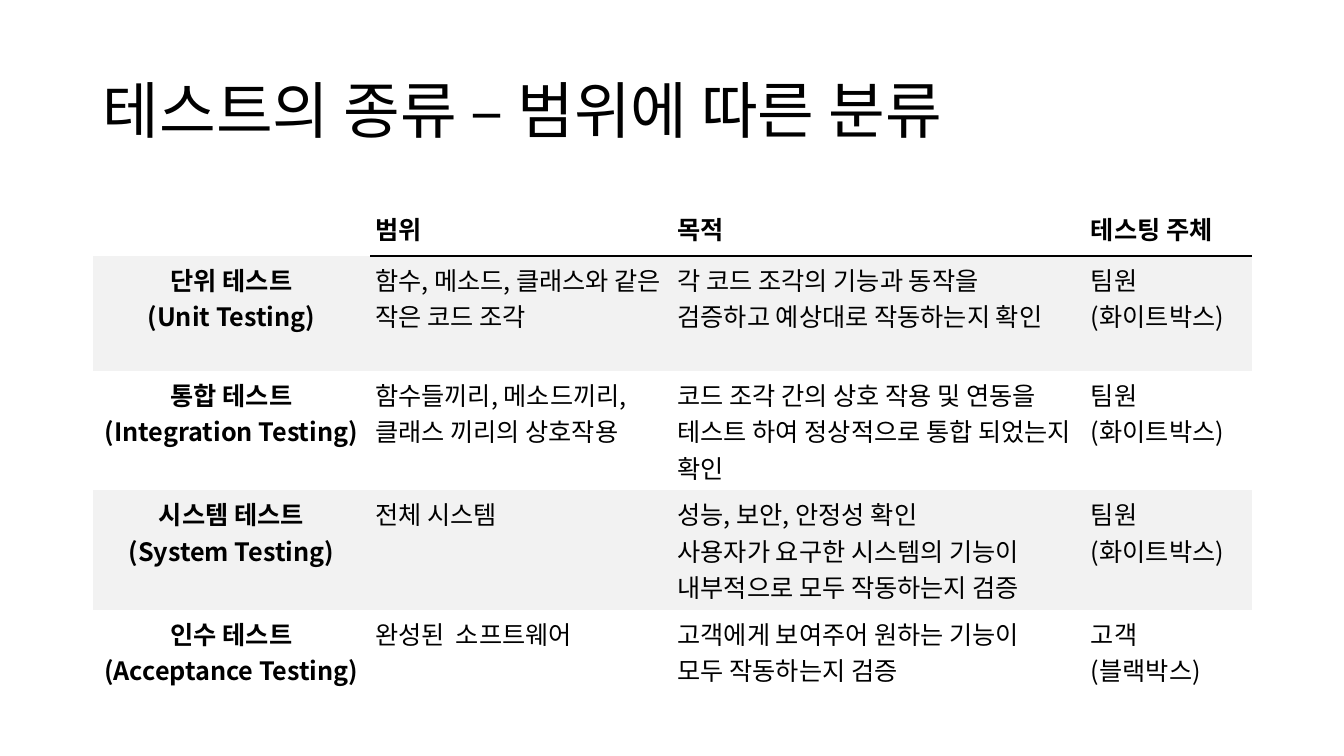
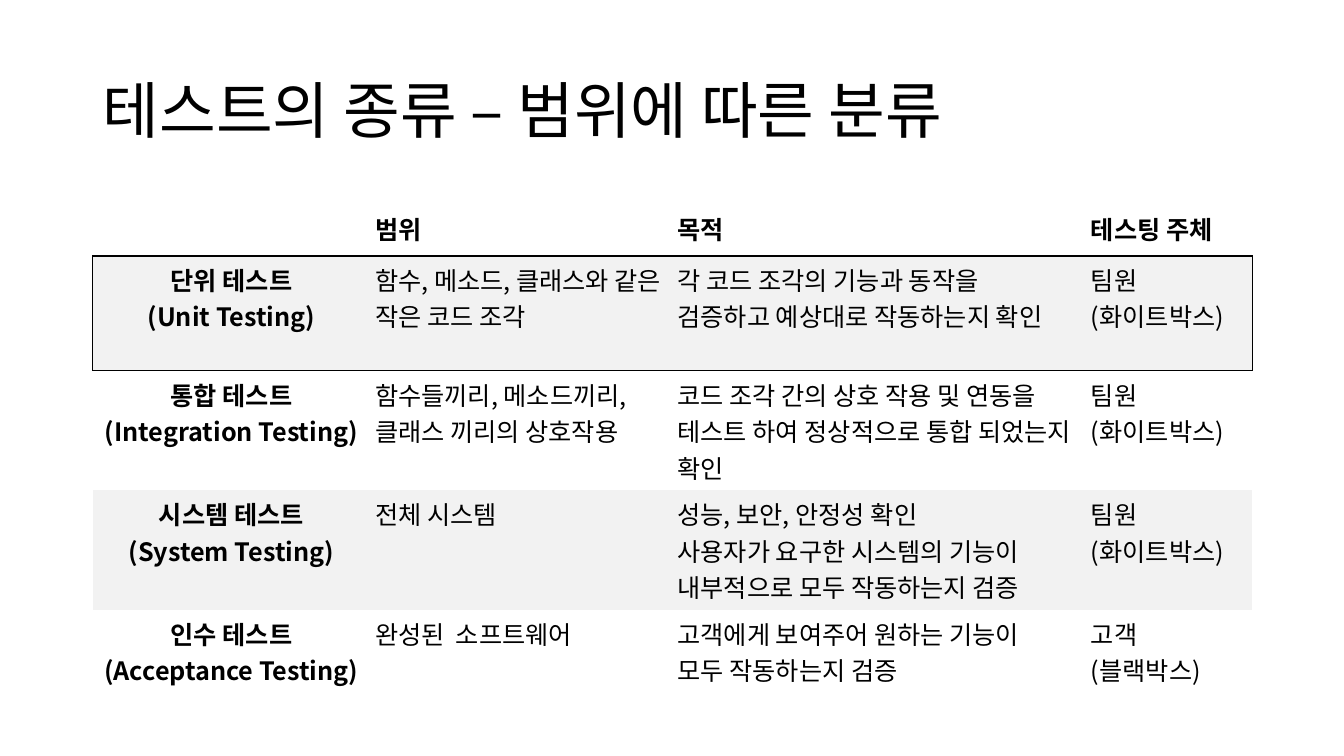
from dataclasses import dataclass
from typing import NamedTuple

from lxml.etree import SubElement
from pptx import Presentation
from pptx.dml.color import RGBColor
from pptx.enum.text import MSO_ANCHOR, MSO_AUTO_SIZE, PP_ALIGN
from pptx.oxml.ns import qn
from pptx.slide import Slide
from pptx.table import _Cell as Cell
from pptx.text.text import TextFrame
from pptx.util import Inches, Pt


@dataclass(frozen=True)
class Theme:
    font: str = "Noto Sans CJK KR"
    ink: str = "000000"
    band: str = "F2F2F2"
    title: int = 44
    body: int = 18
    rule: int = 1


class Level(NamedTuple):
    name: str
    scope: str
    goal: str
    tester: str


THEME = Theme()
TITLE = "테스트의 종류 – 범위에 따른 분류"
LEFT, WIDTH = 0.92, 11.5
COLS = (2.75, 3, 4.1, 1.65)
HEAD, ROW = 0.54, 1.14
TEAM = "팀원\v(화이트박스)"
# "\v" breaks a line inside a paragraph; "\n" starts a new paragraph.
LEVELS = (
    Level("", "범위", "목적", "테스팅 주체"),
    Level("단위 테스트\v(Unit Testing)",
          "함수, 메소드, 클래스와 같은 작은 코드 조각",
          "각 코드 조각의 기능과 동작을\v검증하고 예상대로 작동하는지 확인",
          TEAM),
    Level("통합 테스트\n(Integration Testing)",
          "함수들끼리, 메소드끼리,\v클래스 끼리의 상호작용",
          "코드 조각 간의 상호 작용 및 연동을\v테스트 하여 정상적으로 통합 되었는지 확인",
          TEAM),
    Level("시스템 테스트\n(System Testing)",
          "전체 시스템",
          "성능, 보안, 안정성 확인\v사용자가 요구한 시스템의 기능이\v내부적으로 모두 작동하는지 검증",
          TEAM),
    Level("인수 테스트\n(Acceptance Testing)",
          "완성된  소프트웨어",
          "고객에게 보여주어 원하는 기능이\v모두 작동하는지 검증",
          "고객\v(블랙박스)"),
)


def style(frame: TextFrame, size: int, bold: bool, align: PP_ALIGN) -> None:
    for para in frame.paragraphs:
        para.alignment = align
        for run in para.runs:
            font = run.font
            font.name, font.size, font.bold = THEME.font, Pt(size), bold
            font.color.rgb = RGBColor.from_string(THEME.ink)
            SubElement(font._element, qn("a:ea"), typeface=THEME.font)


def edges(row: int, col: int, boxed: bool) -> str:
    """Name the sides (L, R, T, B) of a cell that carry a line."""
    sides = ""
    if boxed or col > 0:
        sides += {0: "B", 1: "T"}.get(row, "")
    if boxed:
        sides += {1: "B", 2: "T"}.get(row, "")
        if row == 1:
            sides += {0: "L", len(COLS) - 1: "R"}.get(col, "")
    return sides


def border(cell: Cell, sides: str) -> None:
    props = cell._tc.get_or_add_tcPr()
    for side in "LRTB":
        line = SubElement(props, qn(f"a:ln{side}"), w=str(Pt(THEME.rule)))
        if side in sides:
            fill = SubElement(line, qn("a:solidFill"))
            SubElement(fill, qn("a:srgbClr"), val=THEME.ink)
        else:
            SubElement(line, qn("a:noFill"))


def add_title(slide: Slide) -> None:
    title = slide.shapes.title
    title.left, title.top = Inches(LEFT), Inches(0.4)
    title.width, title.height = Inches(WIDTH), Inches(1.45)
    frame = title.text_frame
    frame.text = TITLE
    frame.auto_size = MSO_AUTO_SIZE.NONE
    frame.vertical_anchor = MSO_ANCHOR.MIDDLE
    frame.paragraphs[0].line_spacing = 0.9
    style(frame, THEME.title, False, PP_ALIGN.LEFT)


def fill_cell(cell: Cell, text: str, row: int, col: int, boxed: bool) -> None:
    cell.margin_left = cell.margin_right = Inches(0.05)
    cell.margin_top = cell.margin_bottom = Inches(0.05)
    cell.vertical_anchor = MSO_ANCHOR.TOP if row else MSO_ANCHOR.MIDDLE
    border(cell, edges(row, col, boxed))
    if row % 2:
        cell.fill.solid()
        cell.fill.fore_color.rgb = RGBColor.from_string(THEME.band)
    else:
        cell.fill.background()
    cell.text_frame.text = text
    align = PP_ALIGN.LEFT if col else PP_ALIGN.CENTER
    style(cell.text_frame, THEME.body, row == 0 or col == 0, align)


def add_levels(slide: Slide, boxed: bool) -> None:
    high = HEAD + ROW * (len(LEVELS) - 1)
    table = slide.shapes.add_table(
        len(LEVELS), len(COLS),
        Inches(LEFT), Inches(2), Inches(WIDTH), Inches(high)).table
    table.first_row = table.horz_banding = False
    for col, wide in enumerate(COLS):
        table.columns[col].width = Inches(wide)
    for row, level in enumerate(LEVELS):
        table.rows[row].height = Inches(ROW if row else HEAD)
        for col, text in enumerate(level):
            fill_cell(table.cell(row, col), text, row, col, boxed)


def main() -> None:
    deck = Presentation()
    deck.slide_width, deck.slide_height = Inches(13.33), Inches(7.5)
    for boxed in (False, True):
        slide = deck.slides.add_slide(deck.slide_layouts[5])
        add_title(slide)
        add_levels(slide, boxed)
    deck.save("out.pptx")


if __name__ == "__main__":
    main()
